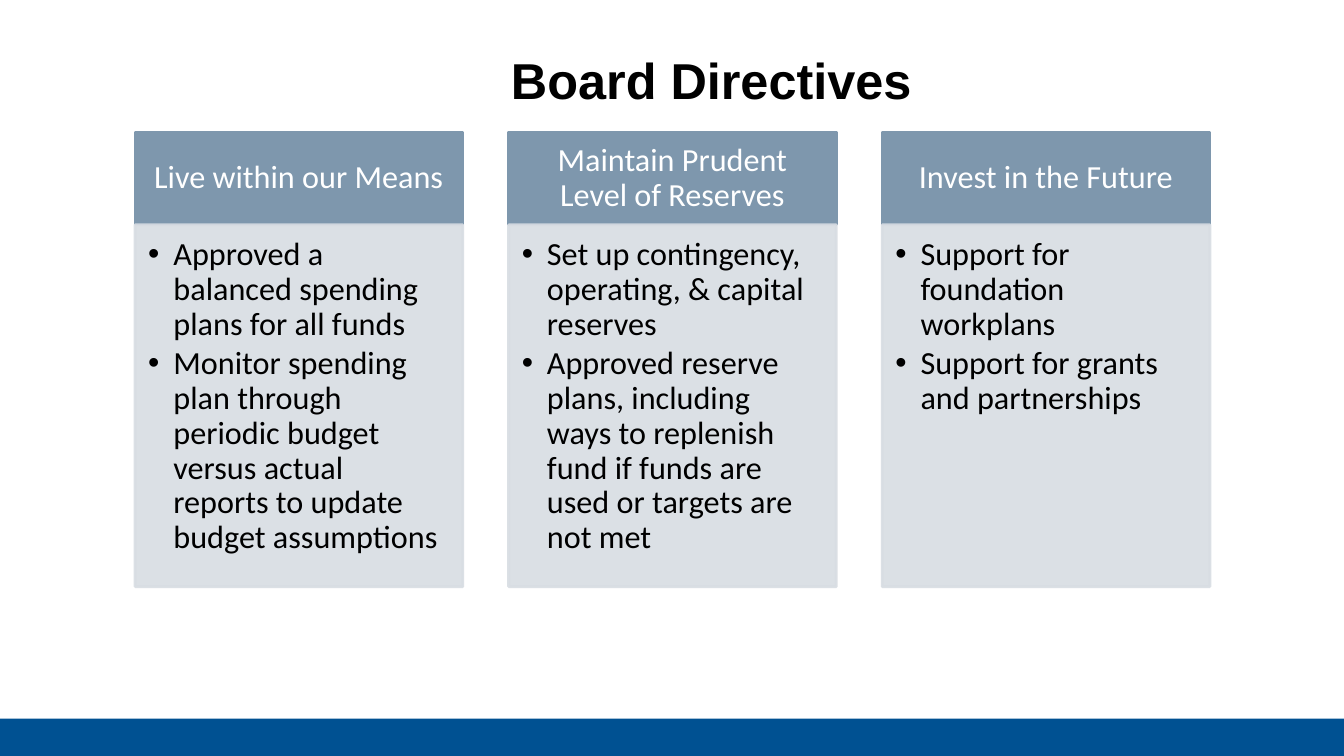
from lxml.etree import SubElement
from pptx import Presentation
from pptx.dml.color import RGBColor
from pptx.enum.shapes import MSO_SHAPE as Shape
from pptx.enum.text import MSO_ANCHOR as Anchor, PP_ALIGN as Align
from pptx.oxml.ns import qn
from pptx.util import Inches, Pt

WHITE = RGBColor(0xFF, 0xFF, 0xFF)
BLACK = RGBColor(0x00, 0x00, 0x00)
FOOTER_BLUE = RGBColor(0x00, 0x51, 0x92)
HEADING_BLUE = RGBColor(0x7E, 0x97, 0xAD)
PANEL_GREY = RGBColor(0xD8, 0xDD, 0xE3)

SLIDE_WIDTH, SLIDE_HEIGHT = 13.33, 7.5
COLUMN_WIDTH, COLUMN_PITCH = 3.25, 3.705
HEADING_HEIGHT = 0.92
BODY_SIZE = 23

DIRECTIVES = [
    ("Live within our Means", [
        "Approved a balanced spending plans for all funds",
        "Monitor spending plan through periodic budget versus actual "
        "reports to update budget assumptions"]),
    ("Maintain Prudent Level of Reserves", [
        "Set up contingency, operating, & capital reserves",
        "Approved reserve plans, including ways to replenish fund if "
        "funds are used or targets are not met"]),
    ("Invest in the Future", [
        "Support for foundation workplans",
        "Support for grants and partnerships"]),
]


def add_block(slide, box, color, outlined=True):
    block = slide.shapes.add_shape(Shape.RECTANGLE, *map(Inches, box))
    block.shadow.inherit = False
    block.fill.solid()
    block.fill.fore_color.rgb = color
    if outlined:
        block.line.color.rgb = color
        block.line.width = Pt(2)
    else:
        block.line.fill.background()
    return block


def set_frame(frame, insets, anchor=Anchor.TOP):
    frame.word_wrap = True
    frame.vertical_anchor = anchor
    (frame.margin_left, frame.margin_top,
     frame.margin_right, frame.margin_bottom) = map(Inches, insets)


def write(paragraph, text, size, font, color, align, bold=False):
    paragraph.alignment = align
    run = paragraph.add_run()
    run.text = text
    run.font.size = Pt(size)
    run.font.name = font
    run.font.bold = bold
    run.font.color.rgb = color


def add_bullet(paragraph, indent):
    properties = paragraph._p.get_or_add_pPr()
    properties.set("marL", str(Inches(indent)))
    properties.set("indent", str(-Inches(indent)))
    SubElement(properties, qn("a:buFont"), typeface="Arial")
    SubElement(properties, qn("a:buChar"), char="•")


def set_opacity(block, percent):
    """Apply to both the fill and the outline."""
    for color in block._element.spPr.iter(qn("a:srgbClr")):
        SubElement(color, qn("a:alpha"), val=str(percent * 1000))


def add_title(slide, box, text):
    title = slide.shapes.add_textbox(*map(Inches, box))
    set_frame(title.text_frame, (0.13, 0.07, 0.13, 0.07))
    write(title.text_frame.paragraphs[0], text, 36, "Arial", BLACK,
          Align.CENTER, bold=True)


def add_directive(slide, box, heading, points):
    left, top, width, height = box

    # Heading
    header = add_block(slide, (left, top, width, HEADING_HEIGHT), HEADING_BLUE)
    set_frame(header.text_frame, (0.18, 0.1, 0.18, 0.1), Anchor.MIDDLE)
    paragraph = header.text_frame.paragraphs[0]
    paragraph.line_spacing = 0.9
    write(paragraph, heading, BODY_SIZE, "Calibri", WHITE, Align.CENTER)

    # Bulleted panel
    panel = add_block(slide, (left, top + HEADING_HEIGHT, width,
                              height - HEADING_HEIGHT), PANEL_GREY)
    set_opacity(panel, 90)
    frame = panel.text_frame
    set_frame(frame, (0.13, 0.13, 0.18, 0.2))
    for index, point in enumerate(points):
        paragraph = frame.add_paragraph() if index else frame.paragraphs[0]
        paragraph.line_spacing = 0.9
        paragraph.space_after = Pt(BODY_SIZE * 0.15)
        add_bullet(paragraph, 0.25)
        write(paragraph, point, BODY_SIZE, "Calibri", BLACK, Align.LEFT)


def add_directives(slide, box):
    left, top, height = box
    for index, (heading, points) in enumerate(DIRECTIVES):
        column = (left + index * COLUMN_PITCH, top, COLUMN_WIDTH, height)
        add_directive(slide, column, heading, points)


def main():
    deck = Presentation()
    deck.slide_width = Inches(SLIDE_WIDTH)
    deck.slide_height = Inches(SLIDE_HEIGHT)
    slide = deck.slides.add_slide(deck.slide_layouts[6])

    # Footer band
    add_block(slide, (0, 7.13, SLIDE_WIDTH, 0.37), FOOTER_BLUE, outlined=False)
    add_title(slide, (2, 0.42, 10.11, 0.74), "Board Directives")
    add_directives(slide, (1.34, 1.31, 4.51))

    deck.save("out.pptx")


if __name__ == "__main__":
    main()
